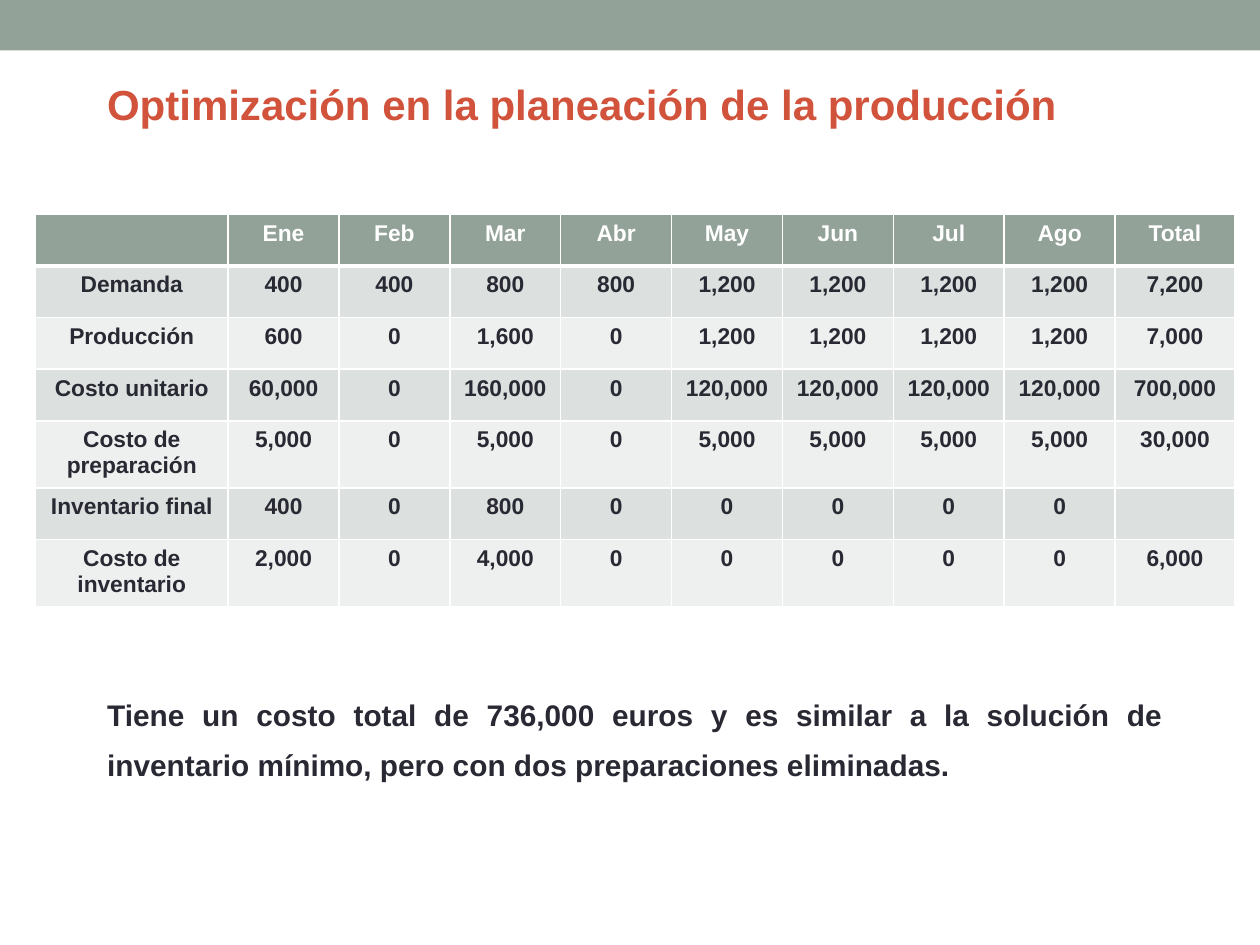
from dataclasses import dataclass

from lxml.etree import SubElement
from pptx import Presentation
from pptx.dml.color import RGBColor
from pptx.enum.shapes import MSO_SHAPE as Preset
from pptx.enum.text import MSO_ANCHOR as Anchor, MSO_AUTO_SIZE as AutoSize, PP_ALIGN as Align
from pptx.oxml.ns import qn
from pptx.util import Inches, Pt


@dataclass(frozen=True)
class Theme:
    """Colours, font and type sizes of the slide."""
    font: str = "Arial"
    sage: str = "93A299"
    rust: str = "D2533C"
    ink: str = "292934"
    white: str = "FFFFFF"
    bands: tuple = ("DCE0DE", "EEF0EF")
    title_size: int = 24
    body_size: int = 17
    table_size: int = 13


THEME = Theme()
TITLE = "Optimización en la planeación de la producción"
CONCLUSION = (
    "Tiene un costo total de 736,000 euros y es similar a la solución de "
    "inventario mínimo, pero con dos preparaciones eliminadas."
)
PLAN = [
    ["", "Ene", "Feb", "Mar", "Abr", "May", "Jun", "Jul", "Ago", "Total"],
    ["Demanda", "400", "400", "800", "800"] + ["1,200"] * 4 + ["7,200"],
    ["Producción", "600", "0", "1,600", "0"] + ["1,200"] * 4 + ["7,000"],
    ["Costo unitario", "60,000", "0", "160,000", "0"] + ["120,000"] * 4 + ["700,000"],
    ["Costo de preparación", "5,000", "0", "5,000", "0"] + ["5,000"] * 4 + ["30,000"],
    ["Inventario final", "400", "0", "800", "0"] + ["0"] * 4 + [""],
    ["Costo de inventario", "2,000", "0", "4,000", "0"] + ["0"] * 4 + ["6,000"],
]
COLUMN_WIDTHS = [1.53] + [0.88] * 8 + [0.95]
ROW_HEIGHT = 0.41


def paint(target, color):
    """Fill a shape or cell with a solid colour."""
    target.fill.solid()
    target.fill.fore_color.rgb = RGBColor.from_string(color)


def write(paragraph, text, size, color, align):
    """Add one bold run to a paragraph and align it."""
    paragraph.alignment = align
    run = paragraph.add_run()
    run.text = text
    run.font.name = THEME.font
    run.font.size = Pt(size)
    run.font.bold = True
    run.font.color.rgb = RGBColor.from_string(color)


def place(region, box):
    """Move a shape to a box given in inches."""
    region.left, region.top, region.width, region.height = map(Inches, box)


def border(cell, bottom_width):
    """Draw white rules around a cell, with its own bottom width."""
    properties = cell._tc.get_or_add_tcPr()
    widths = {"a:lnL": 1, "a:lnR": 1, "a:lnT": 1, "a:lnB": bottom_width}
    for position, (side, width) in enumerate(widths.items()):
        rule = SubElement(properties, qn(side), w=str(Pt(width)))
        SubElement(SubElement(rule, qn("a:solidFill")), qn("a:srgbClr"), val=THEME.white)
        properties.insert(position, rule)


def add_banner(slide, box):
    """Draw the coloured band across the top."""
    banner = slide.shapes.add_shape(Preset.RECTANGLE, *map(Inches, box))
    banner.shadow.inherit = False
    paint(banner, THEME.sage)
    banner.line.fill.background()


def fit_text(placeholder, box):
    """Place a text placeholder and return its first paragraph."""
    place(placeholder, box)
    frame = placeholder.text_frame
    frame.word_wrap = True
    frame.auto_size = AutoSize.SHAPE_TO_FIT_TEXT
    frame.vertical_anchor = Anchor.TOP
    return frame.paragraphs[0]


def add_title(slide, box):
    """Write the slide title."""
    heading = fit_text(slide.shapes.title, box)
    write(heading, TITLE, THEME.title_size, THEME.rust, Align.LEFT)


def add_conclusion(slide, box):
    """Write the justified conclusion without a bullet."""
    conclusion = fit_text(slide.placeholders[1], box)
    conclusion.line_spacing = 1.4
    conclusion.space_before = Pt(10)
    properties = conclusion._p.get_or_add_pPr()
    properties.set("marL", "0")
    properties.set("indent", "0")
    SubElement(properties, qn("a:buNone"))
    write(conclusion, CONCLUSION, THEME.body_size, THEME.ink, Align.JUSTIFY)


def add_plan(slide, box):
    """Build the banded production plan table."""
    plan = slide.shapes.add_table(len(PLAN), len(COLUMN_WIDTHS), *map(Inches, box)).table
    for column, width in zip(plan.columns, COLUMN_WIDTHS):
        column.width = Inches(width)
    for index, (row, values) in enumerate(zip(plan.rows, PLAN)):
        row.height = Inches(ROW_HEIGHT)
        is_header = index == 0
        background = THEME.sage if is_header else THEME.bands[(index - 1) % 2]
        color = THEME.white if is_header else THEME.ink
        for cell, value in zip(row.cells, values):
            paint(cell, background)
            border(cell, 3 if is_header else 1)
            if value:
                write(cell.text_frame.paragraphs[0], value, THEME.table_size, color, Align.CENTER)


def main():
    """Build and save the presentation."""
    deck = Presentation()
    deck.slide_width, deck.slide_height = Inches(10), Inches(7.5)
    slide = deck.slides.add_slide(deck.slide_layouts[1])
    add_banner(slide, (0, 0, 10, 0.4))
    add_title(slide, (0.75, 0.57, 8.74, 0.5))
    add_plan(slide, (0.28, 1.7, sum(COLUMN_WIDTHS), ROW_HEIGHT * len(PLAN)))
    add_conclusion(slide, (0.75, 5.37, 8.58, 0.86))
    deck.save("out.pptx")


if __name__ == "__main__":
    main()
